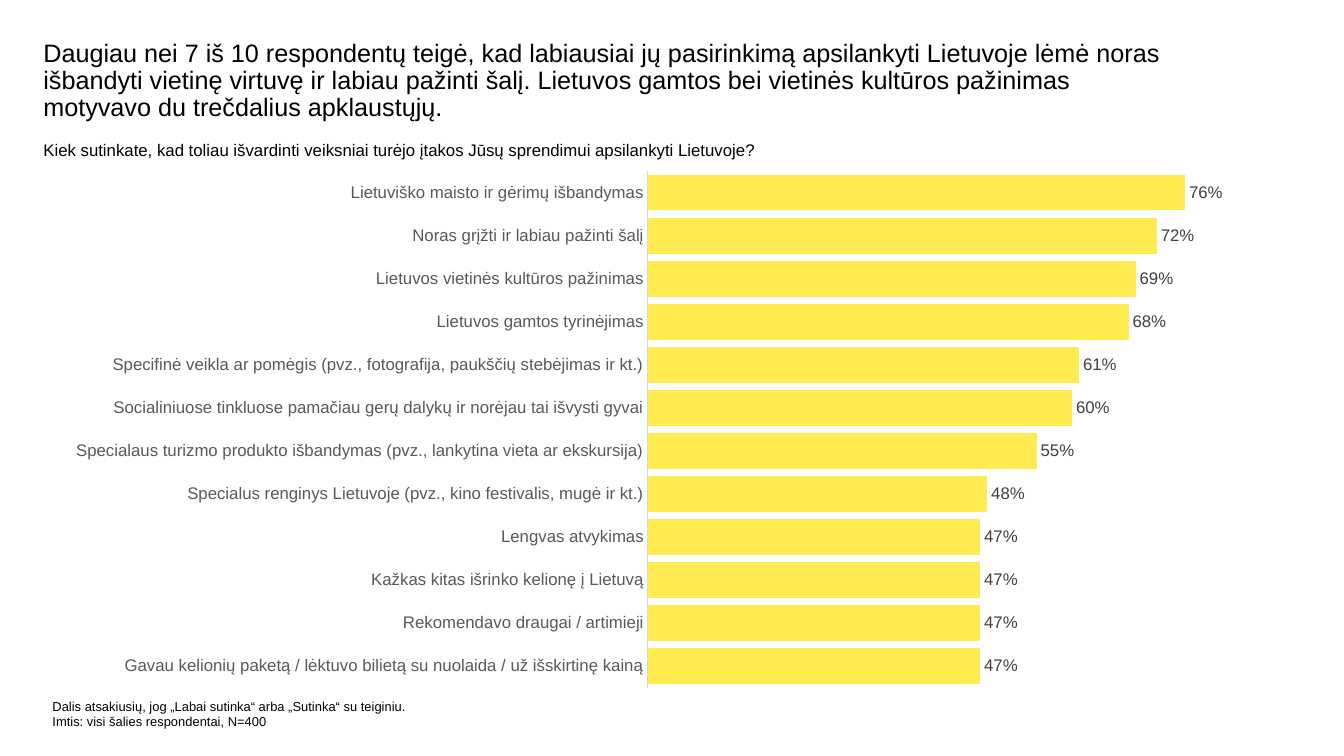
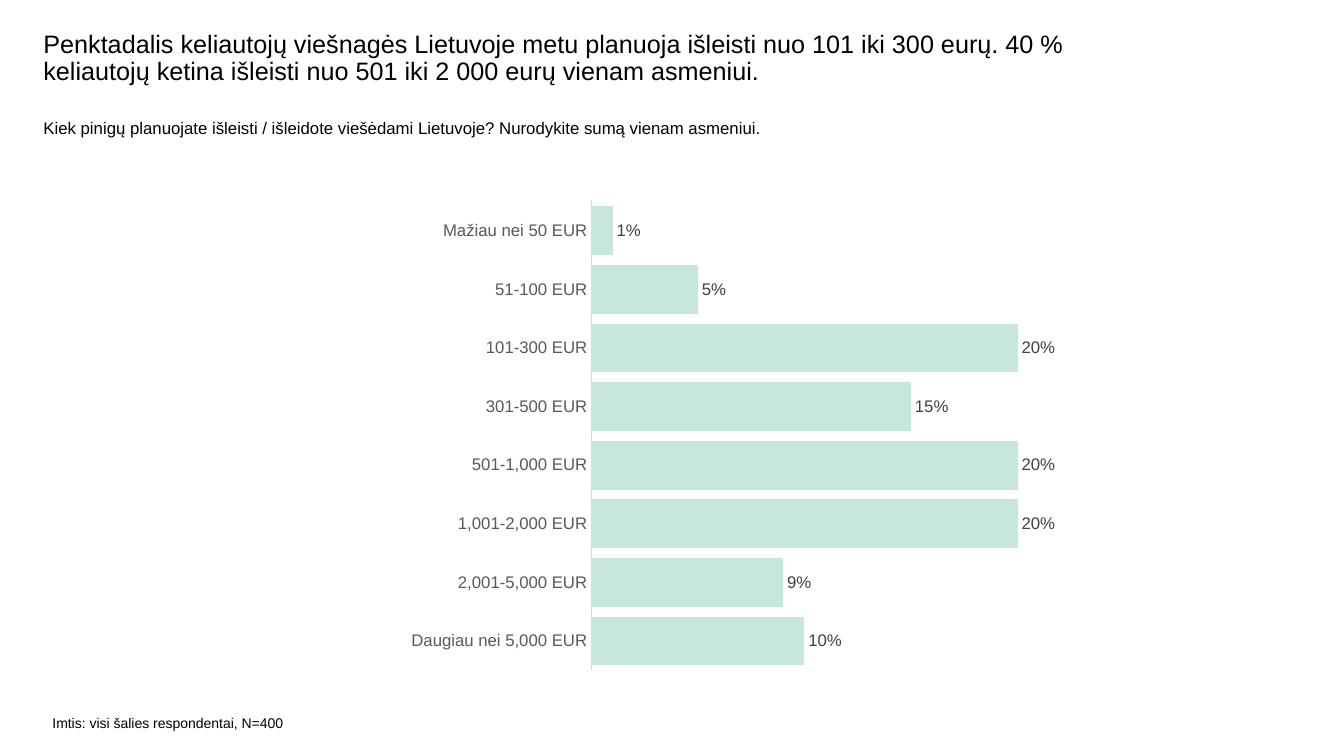
"""Builds two survey slides, each with a title, a question, a bar chart and a note."""
from lxml import etree
from pptx import Presentation
from pptx.chart.data import CategoryChartData
from pptx.dml.color import RGBColor
from pptx.enum import chart as ch
from pptx.oxml.ns import qn
from pptx.util import Inches, Pt

FACE = "Arial"
BLACK, GREY, DARK, RULE = "000000", "595959", "404040", "D9D9D9"

SLIDES = [
    dict(
        texts=[
            ((0.43, 0.4, 11.25, 0.6), 18, 0.9, [
                "Daugiau nei 7 iš 10 respondentų teigė, kad labiausiai jų pasirinkimą "
                "apsilankyti Lietuvoje lėmė noras išbandyti vietinę virtuvę ir labiau "
                "pažinti šalį. Lietuvos gamtos bei vietinės kultūros pažinimas motyvavo "
                "du trečdalius apklaustųjų."]),
            ((0.43, 1.39, 11.89, 0.61), 12, 1.0, [
                "Kiek sutinkate, kad toliau išvardinti veiksniai turėjo įtakos Jūsų "
                "sprendimui apsilankyti Lietuvoje?"]),
            ((0.52, 6.93, 3.52, 0.4), 9.2, 1.0, [
                "Dalis atsakiusių, jog „Labai sutinka“ arba „Sutinka“ su teiginiu.",
                "Imtis: visi šalies respondentai, N=400"]),
        ],
        box=(0.52, 1.59, 11.75, 5.34), plot=None, flip=False,
        top=0.8, fill="FFEB50",
        bars=[
            ("Gavau kelionių paketą / lėktuvo bilietą su nuolaida / už išskirtinę kainą", 0.47),
            ("Rekomendavo draugai / artimieji", 0.47),
            ("Kažkas kitas išrinko kelionę į Lietuvą", 0.47),
            ("Lengvas atvykimas", 0.47),
            ("Specialus renginys Lietuvoje (pvz., kino festivalis, mugė ir kt.)", 0.48),
            ("Specialaus turizmo produkto išbandymas (pvz., lankytina vieta ar ekskursija)", 0.55),
            ("Socialiniuose tinkluose pamačiau gerų dalykų ir norėjau tai išvysti gyvai", 0.6),
            ("Specifinė veikla ar pomėgis (pvz., fotografija, paukščių stebėjimas ir kt.)", 0.61),
            ("Lietuvos gamtos tyrinėjimas", 0.68),
            ("Lietuvos vietinės kultūros pažinimas", 0.69),
            ("Noras grįžti ir labiau pažinti šalį", 0.72),
            ("Lietuviško maisto ir gėrimų išbandymas", 0.76),
        ]),
    dict(
        texts=[
            ((0.43, 0.31, 10.35, 0.79), 18, 0.9, [
                "Penktadalis keliautojų viešnagės Lietuvoje metu planuoja išleisti nuo "
                "101 iki 300 eurų. 40 % keliautojų ketina išleisti nuo 501 iki 2 000 "
                "eurų vienam asmeniui."]),
            ((0.43, 1.17, 11.89, 0.61), 12, 1.0, [
                "Kiek pinigų planuojate išleisti / išleidote viešėdami Lietuvoje? "
                "Nurodykite sumą vienam asmeniui."]),
            ((0.52, 7.09, 2.53, 0.24), 10, 1.0, [
                "Imtis: visi šalies respondentai, N=400"]),
        ],
        box=(4.08, 1.85, 7.07, 4.95), plot=(0.25, 0.03, 0.75, 0.94), flip=True,
        top=0.25, fill="C7E6DC",
        bars=[
            ("Mažiau nei 50 EUR", 0.01),
            ("51-100 EUR", 0.05),
            ("101-300 EUR", 0.2),
            ("301-500 EUR", 0.15),
            ("501-1,000 EUR", 0.2),
            ("1,001-2,000 EUR", 0.2),
            ("2,001-5,000 EUR", 0.09),
            ("Daugiau nei 5,000 EUR", 0.1),
        ]),
]


def tint(code):
    return RGBColor.from_string(code)


def style(font, size, code):
    font.name, font.size = FACE, Pt(size)
    font.color.rgb = tint(code)


deck = Presentation()
deck.slide_width, deck.slide_height = Inches(13.33), Inches(7.5)

for page in SLIDES:
    slide = deck.slides.add_slide(deck.slide_layouts[6])

    for box, size, pitch, lines in page["texts"]:
        frame = slide.shapes.add_textbox(*map(Inches, box)).text_frame
        frame.word_wrap = True
        frame.margin_left = frame.margin_right = 0
        frame.margin_top = frame.margin_bottom = 0
        frame.text = "\n".join(lines)
        for para in frame.paragraphs:
            para.line_spacing = pitch
            style(para.font, size, BLACK)

    names, vals = zip(*page["bars"])
    data = CategoryChartData(number_format="0%")
    data.categories = names
    data.add_series("Series 1", vals)
    chart = slide.shapes.add_chart(
        ch.XL_CHART_TYPE.BAR_CLUSTERED, *map(Inches, page["box"]), data).chart
    chart.has_legend = chart.has_title = False
    style(chart.font, 12, BLACK)

    axis = chart.category_axis
    axis.reverse_order = page["flip"]
    axis.major_tick_mark = axis.minor_tick_mark = ch.XL_TICK_MARK.NONE
    axis.format.line.color.rgb = tint(RULE)
    axis.format.line.width = Pt(0.75)
    style(axis.tick_labels.font, 12, GREY)

    scale = chart.value_axis
    scale.visible = scale.has_major_gridlines = False
    scale.minimum_scale, scale.maximum_scale = 0, page["top"]

    plot = chart.plots[0]
    plot.gap_width = 20
    plot.vary_by_categories = False
    fill = plot.series[0].format.fill
    fill.solid()
    fill.fore_color.rgb = tint(page["fill"])

    plot.has_data_labels = True
    labels = plot.data_labels
    labels.show_value = True
    labels.position = ch.XL_LABEL_POSITION.OUTSIDE_END
    labels.number_format, labels.number_format_is_linked = "0%", False
    style(labels.font, 12, DARK)

    if page["plot"]:
        area = chart.element.find(".//" + qn("c:plotArea"))
        for old in area.findall(qn("c:layout")):
            area.remove(old)
        layout = etree.Element(qn("c:layout"))
        area.insert(0, layout)
        manual = etree.SubElement(layout, qn("c:manualLayout"))
        rules = [("layoutTarget", "inner"), ("xMode", "edge"), ("yMode", "edge")]
        for tag, val in rules + list(zip("xywh", page["plot"])):
            etree.SubElement(manual, qn("c:" + tag)).set("val", str(val))

deck.save("out.pptx")
